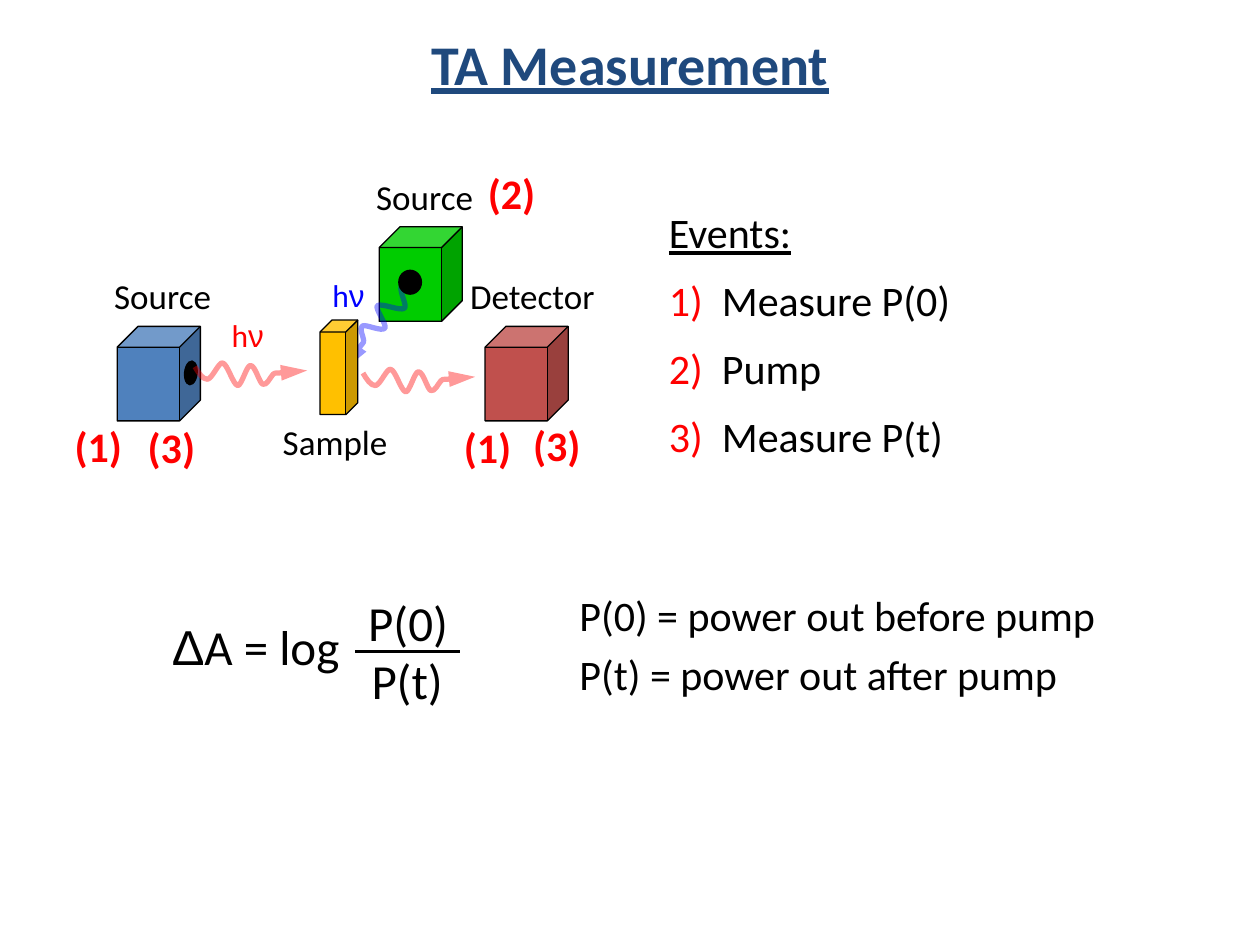
from dataclasses import dataclass

from lxml.etree import SubElement
from pptx import Presentation
from pptx.dml.color import RGBColor
from pptx.enum.shapes import MSO_CONNECTOR, MSO_SHAPE
from pptx.enum.text import MSO_ANCHOR, PP_ALIGN
from pptx.oxml.ns import qn
from pptx.util import Pt


@dataclass(frozen=True)
class Theme:
    font: str = "Calibri"
    greek_font: str = "Arial"
    title_size: int = 32
    formula_size: int = 28
    body_size: int = 24
    label_size: int = 20
    photon_size: int = 18
    title: str = "1F497D"
    ink: str = "000000"
    probe: str = "FF0000"
    pump: str = "0000FF"
    pump_source: str = "00CC00"
    probe_source: str = "4F81BD"
    sample: str = "FFC000"
    detector: str = "C0504D"


@dataclass(frozen=True)
class Words:
    text: str
    color: str = Theme.ink
    font: str = Theme.font
    bold: bool = False
    underline: bool = False


THEME = Theme()

# Wave outline in hundredths of an inch, from the arrow tip to the tail
WAVE_SIZE = (89, 21)
WAVE_TIP = (89, 6)
WAVE_CURVES = [
    [(89, 6), (72, 7), (67, 8)],
    [(62, 8), (64, 8), (62, 9)],
    [(60, 11), (57, 18), (54, 17)],
    [(51, 16), (48, 2), (44, 2)],
    [(41, 2), (37, 18), (34, 18)],
    [(30, 17), (26, 1), (22, 0)],
    [(19, -1), (14, 12), (10, 13)],
    [(6, 13), (3, 8), (0, 3)],
]


def rgb(color):
    return RGBColor.from_string(color)


def add_text(slide, box, size, paragraphs, align=PP_ALIGN.LEFT, wrap=True,
             anchor=MSO_ANCHOR.TOP, before=0, after=0):
    """Each paragraph is a list of Words."""
    frame = slide.shapes.add_textbox(*map(Pt, box)).text_frame
    frame.word_wrap = wrap
    frame.vertical_anchor = anchor
    for index, line in enumerate(paragraphs):
        paragraph = frame.add_paragraph() if index else frame.paragraphs[0]
        paragraph.alignment = align
        paragraph.space_before = Pt(before if index else 0)
        paragraph.space_after = Pt(after)
        for words in line:
            run = paragraph.add_run()
            run.text = words.text
            run.font.name = words.font
            run.font.size = Pt(size)
            run.font.bold = words.bold
            run.font.underline = words.underline
            run.font.color.rgb = rgb(words.color)


def add_label(slide, box, text):
    add_text(slide, box, THEME.label_size, [[Words(text)]], PP_ALIGN.CENTER)


def add_photon(slide, box, color):
    add_text(slide, box, THEME.photon_size,
             [[Words("h", color), Words("ν", color, THEME.greek_font)]])


def add_event_tag(slide, left, top, number):
    add_text(slide, (left, top, 54.7, 45.4), THEME.body_size,
             [[Words(f"({number})", THEME.probe, bold=True)]], PP_ALIGN.CENTER)


def add_cube(slide, left, top, color, width=47.5, depth=None):
    cube = slide.shapes.add_shape(MSO_SHAPE.CUBE, Pt(left), Pt(top), Pt(width), Pt(54))
    cube.shadow.inherit = False
    cube.fill.solid()
    cube.fill.fore_color.rgb = rgb(color)
    cube.line.color.rgb = rgb(THEME.ink)
    cube.line.width = Pt(0)
    if depth:
        cube.adjustments[0] = depth


def add_aperture(slide, box, rotation=0):
    aperture = slide.shapes.add_shape(MSO_SHAPE.OVAL, *map(Pt, box))
    aperture.shadow.inherit = False
    aperture.rotation = rotation
    aperture.fill.solid()
    aperture.fill.fore_color.rgb = rgb(THEME.ink)
    aperture.line.fill.background()


def add_wave(slide, left, top, color, rotation=0):
    width, height = WAVE_SIZE
    builder = slide.shapes.build_freeform(0, 0, scale=Pt(0.72))
    builder.add_line_segments([(width, 0), (width, height), (0, height)])
    wave = builder.convert_to_shape(Pt(left), Pt(top))
    wave.shadow.inherit = False
    wave.rotation = rotation
    wave.fill.background()
    wave.line.color.rgb = rgb(color)
    wave.line.width = Pt(3)

    # Replace the straight outline with curves
    outline = wave.element.find(".//" + qn("a:path"))
    for step in list(outline):
        outline.remove(step)
    steps = [("a:moveTo", [WAVE_TIP])]
    steps += [("a:cubicBezTo", curve) for curve in WAVE_CURVES]
    for tag, points in steps:
        step = SubElement(outline, qn(tag))
        for x, y in points:
            SubElement(step, qn("a:pt"), x=str(x), y=str(y))

    # Transparency and arrowhead
    line = wave.element.spPr.find(qn("a:ln"))
    SubElement(line.find(".//" + qn("a:srgbClr")), qn("a:alpha"), val="40000")
    SubElement(line, qn("a:headEnd"), type="triangle", w="med", len="lg")


def add_fraction_bar(slide, left, right, y):
    bar = slide.shapes.add_connector(MSO_CONNECTOR.STRAIGHT, Pt(left), Pt(y), Pt(right), Pt(y))
    bar.line.color.rgb = rgb(THEME.ink)
    bar.line.width = Pt(1.5)
    SubElement(bar.element.spPr, qn("a:effectLst"))


def add_setup(slide):
    # Pump source, sample and detector
    add_cube(slide, 216.7, 129.6, THEME.pump_source)
    add_label(slide, (202.3, 96.5, 80.6, 31.7), "Source")
    add_photon(slide, (182.9, 154.1, 36, 28.8), THEME.pump)
    add_label(slide, (144, 236.9, 95, 31.7), "Sample")
    add_label(slide, (249.1, 153.4, 110.2, 31.7), "Detector")
    add_cube(slide, 277.2, 186.5, THEME.detector)
    add_wave(slide, 182.9, 176.4, THEME.pump, rotation=129.2)
    add_wave(slide, 207.4, 211, THEME.probe)
    add_aperture(slide, (227.5, 154.1, 13.7, 14.4))
    add_cube(slide, 182.9, 182.9, THEME.sample, width=21.6, depth=0.316)

    # Probe source
    add_cube(slide, 67, 186.5, THEME.probe_source)
    add_label(slide, (52.6, 153.4, 80.6, 31.7), "Source")
    add_aperture(slide, (105.1, 205.9, 7.9, 14.4), rotation=5.7)
    add_photon(slide, (125.3, 177.1, 41.8, 28.8), THEME.probe)
    add_wave(slide, 111.4, 207.4, THEME.probe)

    # Event numbers beside the parts they involve
    for left, top, number in [(28.8, 236.9, 1), (265, 92.2, 2), (70.6, 237.6, 3),
                              (251.3, 237.6, 1), (290.9, 236.2, 3)]:
        add_event_tag(slide, left, top, number)


def add_events(slide):
    lines = [[Words("Events:", underline=True)]]
    for number, event in enumerate(["Measure P(0)", "Pump", "Measure P(t)"], 1):
        lines.append([Words(f"{number})  ", THEME.probe), Words(event)])
    add_text(slide, (375.1, 114.5, 375.8, 154.1), THEME.body_size, lines, after=10)


def add_formula(slide):
    size = THEME.formula_size
    add_text(slide, (91.1, 349, 130, 38.9), size,
             [[Words("Δ", font=THEME.greek_font), Words("A = log")]])
    add_text(slide, (205.2, 367.9, 56.2, 41), size, [[Words("P(t)")]], wrap=False)
    add_text(slide, (203, 334.8, 60.5, 41), size, [[Words("P(0)")]],
             PP_ALIGN.CENTER, wrap=False)
    add_fraction_bar(slide, 203, 262.8, 372.2)
    add_text(slide, (324, 333.4, 329, 71.3), THEME.body_size,
             [[Words("P(0) = power out before pump")],
              [Words("P(t) = power out after pump")]], before=4.8)


def main():
    deck = Presentation()
    deck.slide_width, deck.slide_height = Pt(720), Pt(540)
    slide = deck.slides.add_slide(deck.slide_layouts[6])
    add_setup(slide)
    add_text(slide, (36, 0, 648, 72), THEME.title_size,
             [[Words("TA Measurement", THEME.title, bold=True, underline=True)]],
             PP_ALIGN.CENTER, anchor=MSO_ANCHOR.MIDDLE)
    add_events(slide)
    add_formula(slide)
    deck.save("out.pptx")


if __name__ == "__main__":
    main()
